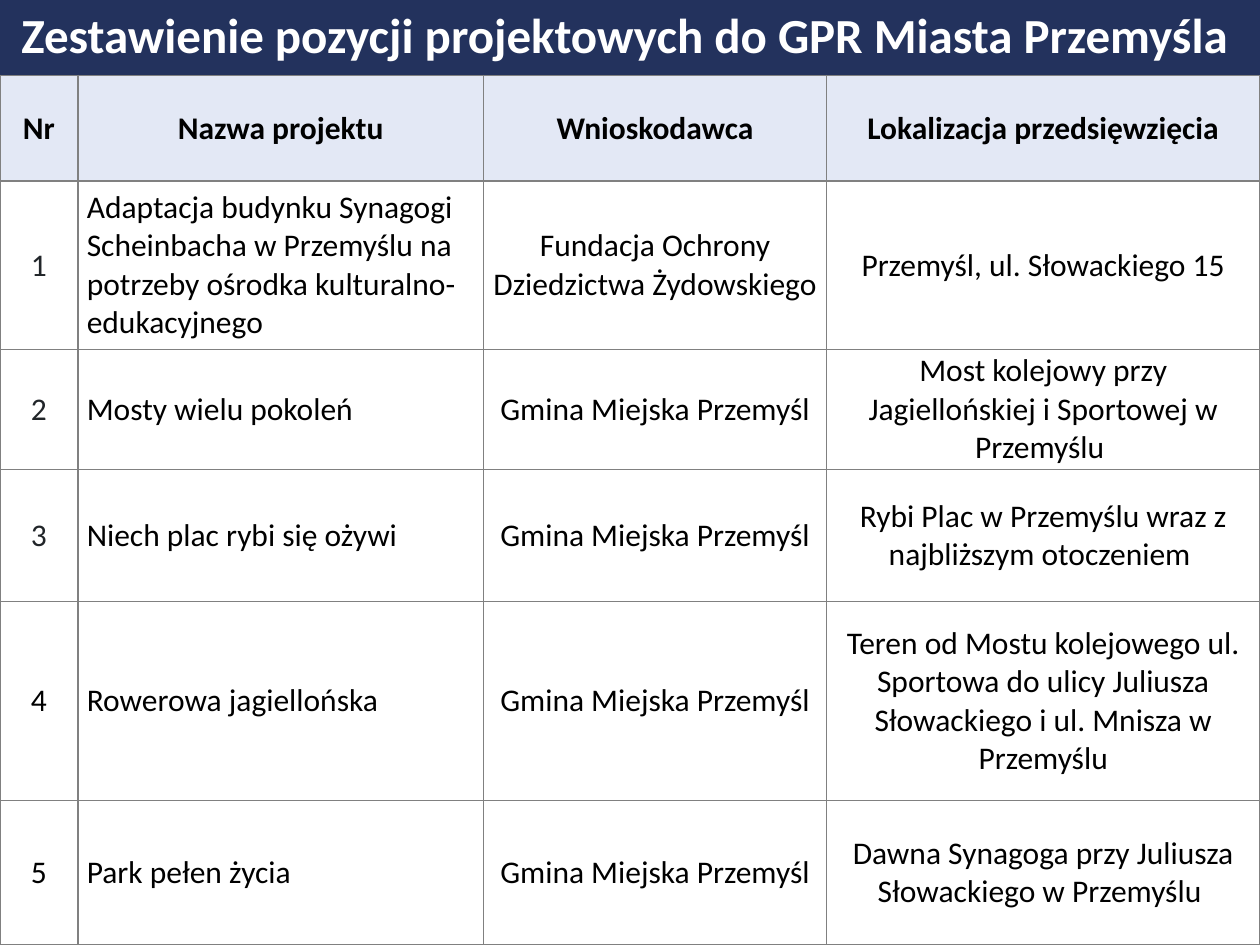
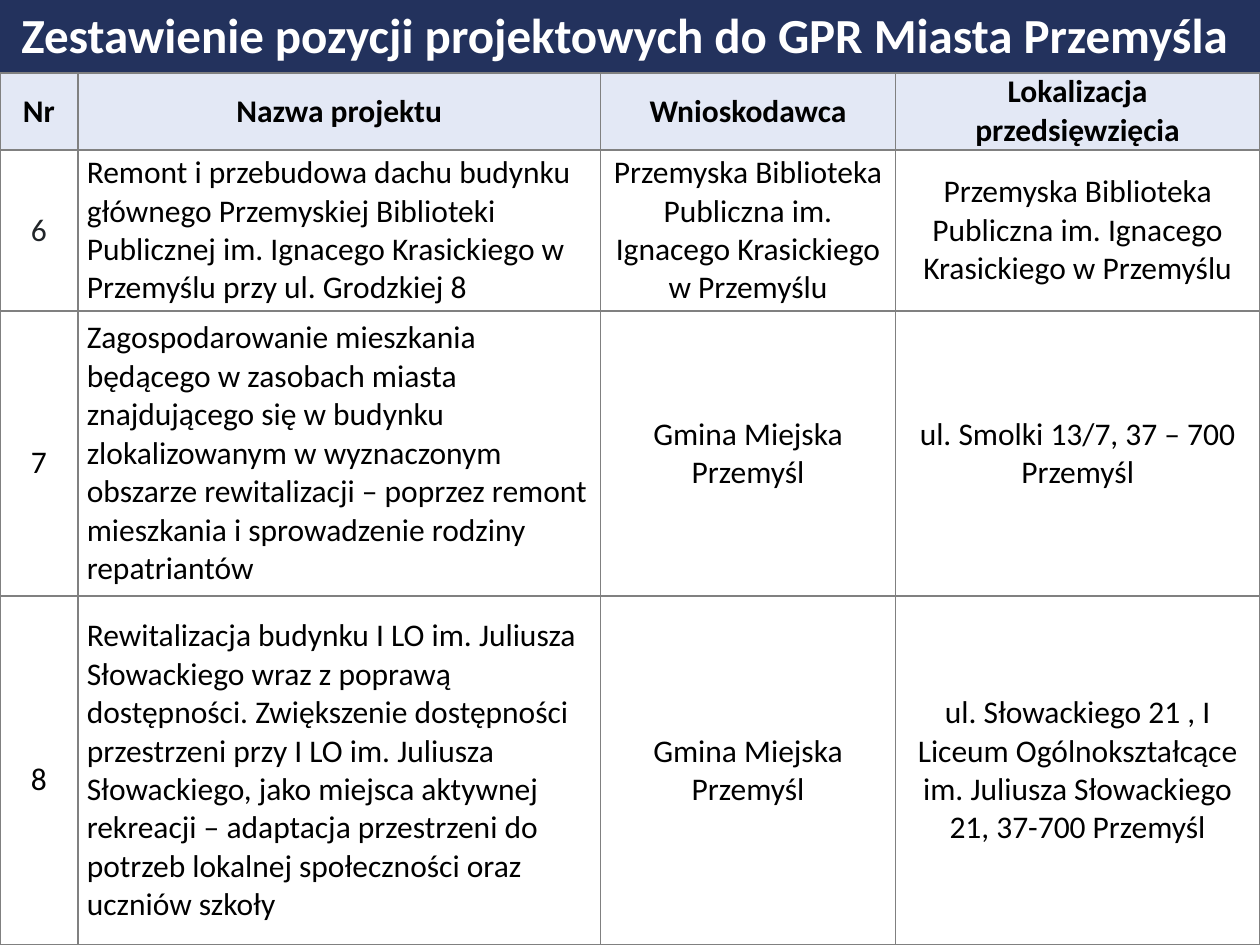
from dataclasses import dataclass

from lxml.etree import SubElement
from pptx import Presentation
from pptx.dml.color import RGBColor
from pptx.enum.shapes import MSO_SHAPE
from pptx.enum.text import MSO_ANCHOR, PP_ALIGN
from pptx.oxml.ns import qn
from pptx.slide import Slide
from pptx.table import _Cell
from pptx.util import Cm, Pt

COLORS = {
    "band": "23325D",
    "header": "E3E8F5",
    "white": "FFFFFF",
    "black": "000000",
    "grey_number": "212529",
    "border": "808080",
}
FONT = "Calibri"
WIDTH, HEIGHT = Cm(25.4), Cm(19.05)
TITLE = "Zestawienie pozycji projektowych do GPR Miasta Przemyśla "
HEADINGS = ("Nr", "Nazwa projektu", "Wnioskodawca", "Lokalizacja przedsięwzięcia")
CITY = "Gmina Miejska Przemyśl"
LIBRARY = "Przemyska Biblioteka Publiczna im. Ignacego Krasickiego w Przemyślu"


@dataclass(frozen=True)
class Project:
    number: int
    name: str
    applicant: str
    location: str
    number_color: str = "black"
    loose_number: bool = False  # number set with 1.5 line spacing


@dataclass(frozen=True)
class ProjectTable:
    """One slide's table; lengths are in centimetres."""
    top: float
    columns: tuple[float, ...]
    rows: tuple[float, ...]
    projects: tuple[Project, ...]


@dataclass(frozen=True)
class CellStyle:
    fill: str = "white"
    color: str = "black"
    bold: bool = False
    align: PP_ALIGN = PP_ALIGN.CENTER
    loose: bool = False


HEADER_STYLE = CellStyle(fill="header", bold=True)
NAME_STYLE = CellStyle(align=PP_ALIGN.LEFT)
BODY_STYLE = CellStyle()

TABLES = (
    ProjectTable(
        top=1.52,
        columns=(1.57, 8.18, 6.91, 8.74),
        rows=(2.13, 3.4, 2.41, 2.67, 4.01, 2.91),
        projects=(
            Project(1, "Adaptacja budynku Synagogi Scheinbacha w Przemyślu na "
                       "potrzeby ośrodka kulturalno-edukacyjnego",
                    "Fundacja Ochrony Dziedzictwa Żydowskiego",
                    "Przemyśl, ul. Słowackiego 15", "grey_number"),
            Project(2, "Mosty wielu pokoleń", CITY,
                    "Most kolejowy przy Jagiellońskiej i Sportowej w Przemyślu ",
                    "grey_number"),
            Project(3, "Niech plac rybi się ożywi", CITY,
                    "Rybi Plac w Przemyślu wraz z najbliższym otoczeniem ",
                    "grey_number"),
            Project(4, "Rowerowa jagiellońska", CITY,
                    "Teren od Mostu kolejowego ul. Sportowa do ulicy Juliusza "
                    "Słowackiego i ul. Mnisza w Przemyślu"),
            Project(5, "Park pełen życia", CITY,
                    "Dawna Synagoga przy Juliusza Słowackiego w Przemyślu "),
        ),
    ),
    ProjectTable(
        top=1.47,
        columns=(1.57, 10.54, 5.94, 7.35),
        rows=(1.55, 3.25, 5.74, 7.04),
        projects=(
            Project(6, "Remont i przebudowa dachu budynku głównego Przemyskiej "
                       "Biblioteki Publicznej im. Ignacego Krasickiego w Przemyślu "
                       "przy ul. Grodzkiej 8",
                    LIBRARY, LIBRARY, "grey_number"),
            Project(7, "Zagospodarowanie mieszkania będącego w zasobach miasta "
                       "znajdującego się w budynku zlokalizowanym w wyznaczonym "
                       "obszarze rewitalizacji – poprzez remont mieszkania "
                       "i sprowadzenie rodziny repatriantów",
                    CITY, "ul. Smolki 13/7, 37 – 700 Przemyśl", loose_number=True),
            Project(8, "Rewitalizacja budynku I LO im. Juliusza Słowackiego wraz "
                       "z poprawą dostępności. Zwiększenie dostępności przestrzeni "
                       "przy I LO im. Juliusza Słowackiego, jako miejsca aktywnej "
                       "rekreacji – adaptacja przestrzeni do potrzeb lokalnej "
                       "społeczności oraz uczniów szkoły",
                    CITY, "ul. Słowackiego 21 , I Liceum Ogólnokształcące im. "
                          "Juliusza Słowackiego 21, 37-700 Przemyśl",
                    loose_number=True),
        ),
    ),
)


def rgb(name: str) -> RGBColor:
    return RGBColor.from_string(COLORS[name])


def format_run(run, size: int, color: str, bold: bool) -> None:
    run.font.name = FONT
    run.font.size = Pt(size)
    run.font.bold = bold
    run.font.color.rgb = rgb(color)


def add_title_band(slide: Slide) -> None:
    band = slide.shapes.add_shape(MSO_SHAPE.RECTANGLE, 0, 0, WIDTH, Cm(1.52))
    band.shadow.inherit = False
    band.fill.solid()
    band.fill.fore_color.rgb = rgb("band")
    band.line.fill.background()
    text_frame = band.text_frame
    text_frame.word_wrap = True
    text_frame.vertical_anchor = MSO_ANCHOR.MIDDLE
    text_frame.text = TITLE
    paragraph = text_frame.paragraphs[0]
    paragraph.alignment = PP_ALIGN.CENTER
    paragraph.line_spacing = 0.9
    format_run(paragraph.runs[0], 28, "white", True)


def add_borders(cell: _Cell) -> None:
    properties = cell._tc.get_or_add_tcPr()
    for side in ("a:lnL", "a:lnR", "a:lnT", "a:lnB"):
        line = SubElement(properties, qn(side), w=str(Pt(1)))
        fill = SubElement(line, qn("a:solidFill"))
        SubElement(fill, qn("a:srgbClr"), val=COLORS["border"])


def fill_cell(cell: _Cell, text: str, style: CellStyle) -> None:
    cell.margin_left = cell.margin_right = Cm(0.18)
    cell.margin_top = cell.margin_bottom = 0
    cell.vertical_anchor = MSO_ANCHOR.MIDDLE
    add_borders(cell)
    cell.fill.solid()
    cell.fill.fore_color.rgb = rgb(style.fill)
    cell.text_frame.text = text
    paragraph = cell.text_frame.paragraphs[0]
    paragraph.alignment = style.align
    if style.loose:
        paragraph.line_spacing = 1.5
    else:
        paragraph.space_before = paragraph.space_after = Pt(6)
    format_run(paragraph.runs[0], 18, style.color, style.bold)


def add_project_table(slide: Slide, content: ProjectTable) -> None:
    frame = slide.shapes.add_table(
        len(content.rows), len(content.columns),
        0, Cm(content.top), WIDTH, Cm(sum(content.rows)))
    table = frame.table
    table.first_row = table.horz_banding = False
    for column, width in zip(table.columns, content.columns):
        column.width = Cm(width)
    for row, height in zip(table.rows, content.rows):
        row.height = Cm(height)
    for cell, heading in zip(table.rows[0].cells, HEADINGS):
        fill_cell(cell, heading, HEADER_STYLE)
    for index, project in enumerate(content.projects, start=1):
        number_style = CellStyle(color=project.number_color, loose=project.loose_number)
        texts = (str(project.number), project.name, project.applicant, project.location)
        styles = (number_style, NAME_STYLE, BODY_STYLE, BODY_STYLE)
        for cell, text, style in zip(table.rows[index].cells, texts, styles):
            fill_cell(cell, text, style)


def main() -> None:
    presentation = Presentation()
    presentation.slide_width, presentation.slide_height = WIDTH, HEIGHT
    for content in TABLES:
        slide = presentation.slides.add_slide(presentation.slide_layouts[6])
        add_title_band(slide)
        add_project_table(slide, content)
    presentation.save("out.pptx")


if __name__ == "__main__":
    main()
